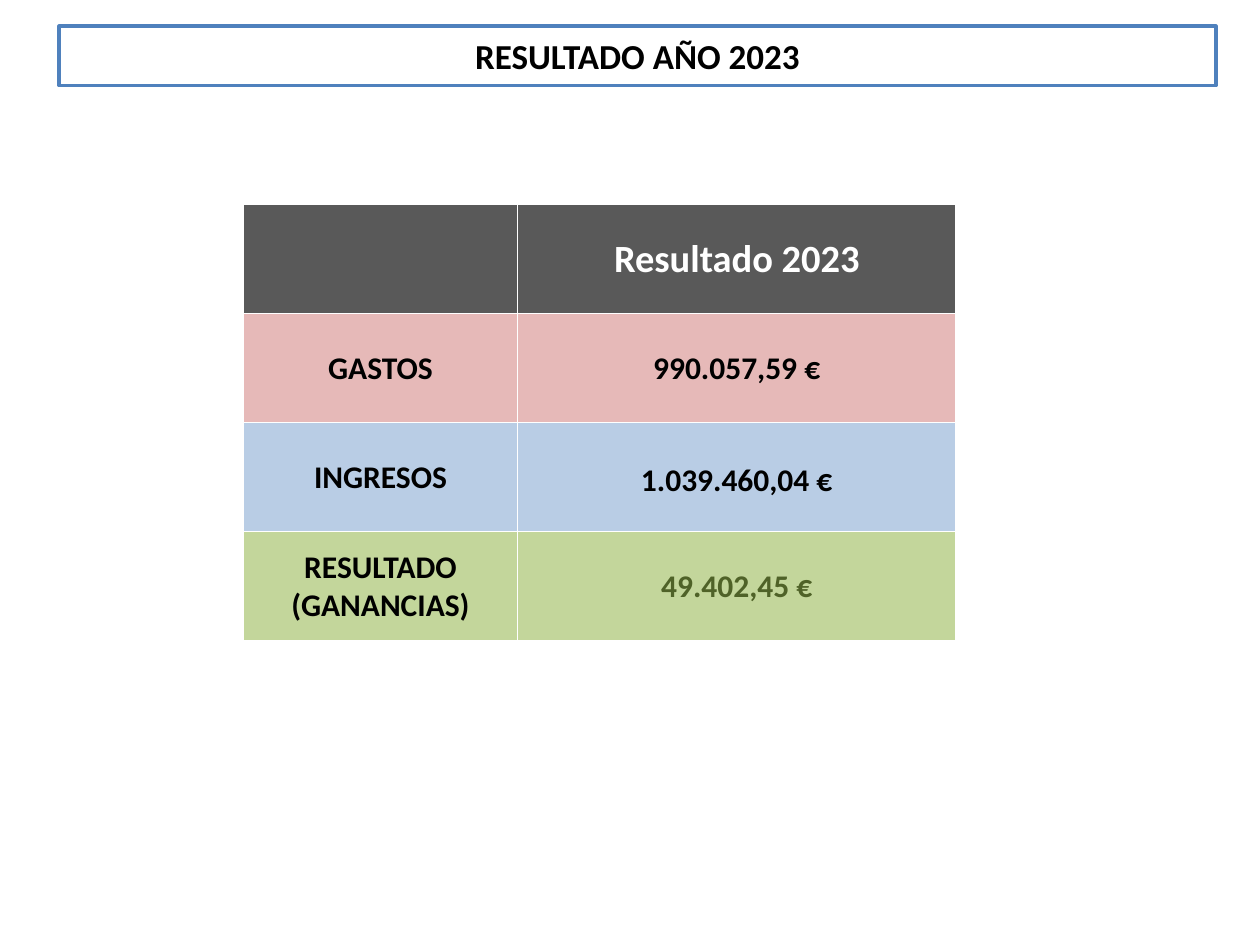
import pptx
import pptx.util
import pptx.dml.color
import pptx.enum.shapes
import pptx.enum.text
from dataclasses import dataclass
from lxml import etree

Pt = pptx.util.Pt
RGB = pptx.dml.color.RGBColor.from_string
MIDDLE = pptx.enum.text.MSO_ANCHOR.MIDDLE
CENTER = pptx.enum.text.PP_ALIGN.CENTER


@dataclass(frozen=True)
class Theme:
    font: str = "Calibri"
    title: int = 20
    head: int = 22
    body: int = 18
    black: str = "000000"
    white: str = "FFFFFF"
    blue: str = "4F81BD"
    gray: str = "595959"
    rose: str = "E6B9B8"
    sky: str = "B9CDE5"
    lime: str = "C3D69B"
    olive: str = "4F6228"


THEME = Theme()


def write(frame, text, size, color):
    frame.text = text
    par = frame.paragraphs[0]
    par.alignment = CENTER
    par.font.name = THEME.font
    par.font.size = Pt(size)
    par.font.bold = True
    par.font.color.rgb = RGB(color)
    return par


def add_title(slide, box, text):
    shape = slide.shapes.add_shape(
        pptx.enum.shapes.MSO_SHAPE.RECTANGLE, *map(Pt, box))
    shape.shadow.inherit = False
    shape.fill.solid()
    shape.fill.fore_color.rgb = RGB(THEME.white)
    shape.line.color.rgb = RGB(THEME.blue)
    shape.line.width = Pt(2)
    shape.text_frame.vertical_anchor = MIDDLE
    write(shape.text_frame, text, THEME.title, THEME.black)


def add_edges(cell):
    """Draw a thin white line on all four sides, before the cell's fill."""
    props = cell._tc.get_or_add_tcPr()
    for spot, side in enumerate(("lnL", "lnR", "lnT", "lnB")):
        line = pptx.oxml.parse_xml(
            f'<a:{side} xmlns:a="http://schemas.openxmlformats.org/drawingml/2006/main"'
            f' w="{Pt(1)}"><a:solidFill><a:srgbClr val="{THEME.white}"/>'
            f'</a:solidFill></a:{side}>')
        props.insert(spot, line)


def add_result(slide, box, rows):
    """Each row holds label, value, fill, text size and value colour."""
    left, top, width, height = box
    table = slide.shapes.add_table(len(rows), 2, *map(Pt, box)).table
    label = 156.7
    table.columns[0].width = Pt(label)
    table.columns[1].width = Pt(width - label)
    for r, (name, value, fill, size, color) in enumerate(rows):
        table.rows[r].height = Pt(height / len(rows))
        for c, (text, ink) in enumerate(((name, THEME.black), (value, color))):
            cell = table.cell(r, c)
            cell.fill.solid()
            cell.fill.fore_color.rgb = RGB(fill)
            cell.vertical_anchor = MIDDLE
            cell.margin_left = cell.margin_right = cell.margin_top = Pt(0.7)
            cell.margin_bottom = Pt(0)
            write(cell.text_frame, text, size, ink)
            add_edges(cell)
    table.cell(2, 1).text_frame.paragraphs[0].line_spacing = 1.15


def main():
    deck = pptx.Presentation()
    deck.slide_width, deck.slide_height = Pt(720), Pt(540)
    slide = deck.slides.add_slide(deck.slide_layouts[6])
    body = THEME.body
    add_result(slide, (139.1, 116.8, 407.2, 249.2), (
        ("", "Resultado 2023", THEME.gray, THEME.head, THEME.white),
        ("GASTOS", "990.057,59 €", THEME.rose, body, THEME.black),
        ("INGRESOS", "1.039.460,04 €", THEME.sky, body, THEME.black),
        ("RESULTADO (GANANCIAS)", "49.402,45 €", THEME.lime, body, THEME.olive),
    ))
    add_title(slide, (33.8, 15, 661, 34), "RESULTADO AÑO 2023")
    deck.save("out.pptx")


if __name__ == "__main__":
    main()
